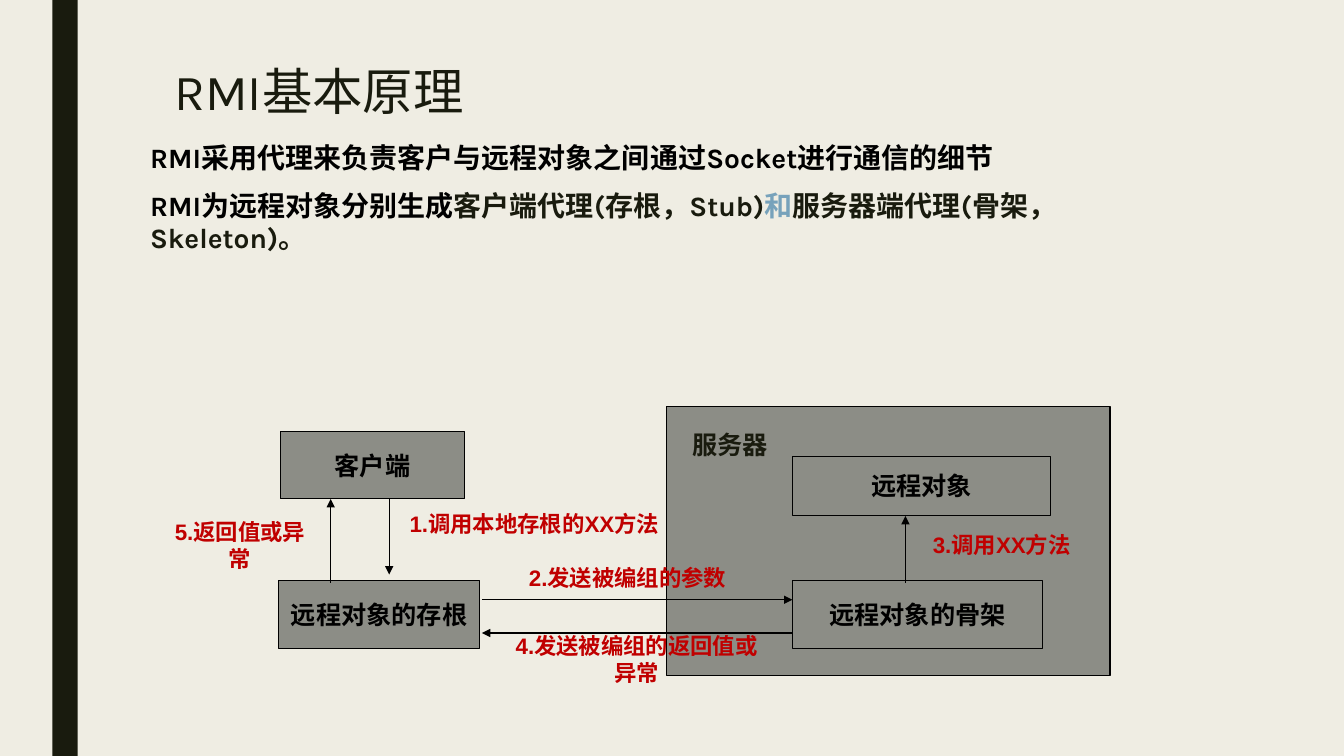
from pptx import Presentation
from pptx.dml.color import RGBColor
from pptx.enum.shapes import MSO_CONNECTOR, MSO_SHAPE
from pptx.enum.text import MSO_ANCHOR, PP_ALIGN
from pptx.oxml.ns import qn
from pptx.util import Inches, Pt
from lxml import etree

RECTANGLE = MSO_SHAPE.RECTANGLE
STRAIGHT = MSO_CONNECTOR.STRAIGHT
TOP, MIDDLE = MSO_ANCHOR.TOP, MSO_ANCHOR.MIDDLE
LEFT, CENTER = PP_ALIGN.LEFT, PP_ALIGN.CENTER
BACKGROUND, DARK, BLACK, GRAY = "EFEDE3", "191B0E", "000000", "8C8D86"
RED, BLUE = "C00000", "77A2BB"

TITLE = "RMI基本原理"
BODY = [
    [("RMI采用代理来负责客户与远程对象之间通过Socket进行通信的细节", BLACK)],
    [("RMI为远程对象分别生成", BLACK), ("客户端代理(存根，Stub)", DARK),
     ("和", BLUE), ("服务器端代理(骨架，Skeleton)。", DARK)],
]
BOXES = [
    ("", 6.61, 4.03, 4.4, 2.67),
    ("客户端", 2.78, 4.28, 1.83, 0.67),
    ("远程对象的存根", 2.76, 5.76, 2, 0.67),
    ("远程对象", 7.86, 4.53, 2.56, 0.58),
    ("远程对象的骨架", 7.86, 5.76, 2.48, 0.67),
]
SERVER_LABEL = ("服务器", 6.7, 4.2, 1.08, 0.42)
STEPS = [
    ("1.调用本地存根的XX方法", (3.92, 5.03, 2.76, 0.33), (3.86, 4.95, 3.86, 5.7)),
    ("2.发送被编组的参数", (4.86, 5.53, 2.73, 0.4), (4.78, 5.95, 7.86, 5.95)),
    ("3.调用XX方法", (9.11, 5.2, 1.65, 0.4), (8.98, 5.78, 8.98, 5.12)),
    ("4.发送被编组的返回值或异常", (4.95, 6.37, 2.73, 0.33), (7.86, 6.28, 4.78, 6.28)),
    ("5.返回值或异常", (1.59, 5.2, 1.58, 0.42), (3.28, 5.78, 3.28, 4.95)),
]


def color(value):
    return RGBColor.from_string(value)


def inches(values):
    return [Inches(value) for value in values]


def write(shape, paragraphs, size=18, font="Arial", bold=True, align=CENTER,
          anchor=MIDDLE, wrap=False, line_spacing=1.0, before=0, after=0):
    frame = shape.text_frame
    frame.word_wrap = wrap
    frame.vertical_anchor = anchor
    for index, runs in enumerate(paragraphs):
        paragraph = frame.add_paragraph() if index else frame.paragraphs[0]
        paragraph.alignment = align
        paragraph.line_spacing = line_spacing
        paragraph.space_before, paragraph.space_after = Pt(before), Pt(after)
        for text, text_color in runs:
            run = paragraph.add_run()
            run.text = text
            run.font.size, run.font.name, run.font.bold = Pt(size), font, bold
            run.font.color.rgb = color(text_color)


def add_box(slide, bounds, fill, outline=None):
    shape = slide.shapes.add_shape(RECTANGLE, *inches(bounds))
    shape.shadow.inherit = False
    shape.fill.solid()
    shape.fill.fore_color.rgb = color(fill)
    if outline:
        shape.line.color.rgb = color(outline)
        shape.line.width = Pt(0.75)
    else:
        shape.line.fill.background()
    return shape


def add_label(slide, text, bounds, text_color, size):
    label = slide.shapes.add_textbox(*inches(bounds))
    write(label, [[(text, text_color)]], size=size)


def add_arrow(slide, ends):
    arrow = slide.shapes.add_connector(STRAIGHT, *inches(ends))
    arrow.line.color.rgb = color(BLACK)
    arrow.line.width = Pt(0.75)
    etree.SubElement(arrow.line._get_or_add_ln(), qn("a:tailEnd"), type="triangle")
    etree.SubElement(arrow._element.spPr, qn("a:effectLst"))


def main():
    presentation = Presentation()
    presentation.slide_width, presentation.slide_height = inches((13.33, 7.5))
    slide = presentation.slides.add_slide(presentation.slide_layouts[5])
    slide.background.fill.solid()
    slide.background.fill.fore_color.rgb = color(BACKGROUND)
    add_box(slide, (0.52, 0, 0.25, 7.5), DARK)

    title = slide.shapes.title
    title.left, title.top, title.width, title.height = inches((1.63, 0.69, 9.34, 0.5))
    write(title, [[(TITLE, DARK)]], size=36, font="Karla", bold=False,
          align=LEFT, wrap=True, line_spacing=0.89)

    body = slide.shapes.add_textbox(*inches((1.39, 1.37, 11.14, 2.3)))
    body.text_frame.margin_right = Inches(0.6)
    write(body, BODY, size=20, font="Karla", align=LEFT, anchor=TOP, wrap=True,
          line_spacing=0.94, before=10, after=2)

    for text, *bounds in BOXES:
        box = add_box(slide, bounds, GRAY, BLACK)
        if text:
            write(box, [[(text, BLACK)]])
    text, *bounds = SERVER_LABEL
    add_label(slide, text, bounds, DARK, 18)
    for text, bounds, ends in STEPS:
        add_arrow(slide, ends)
        add_label(slide, text, bounds, RED, 16)

    presentation.save("out.pptx")


if __name__ == "__main__":
    main()
